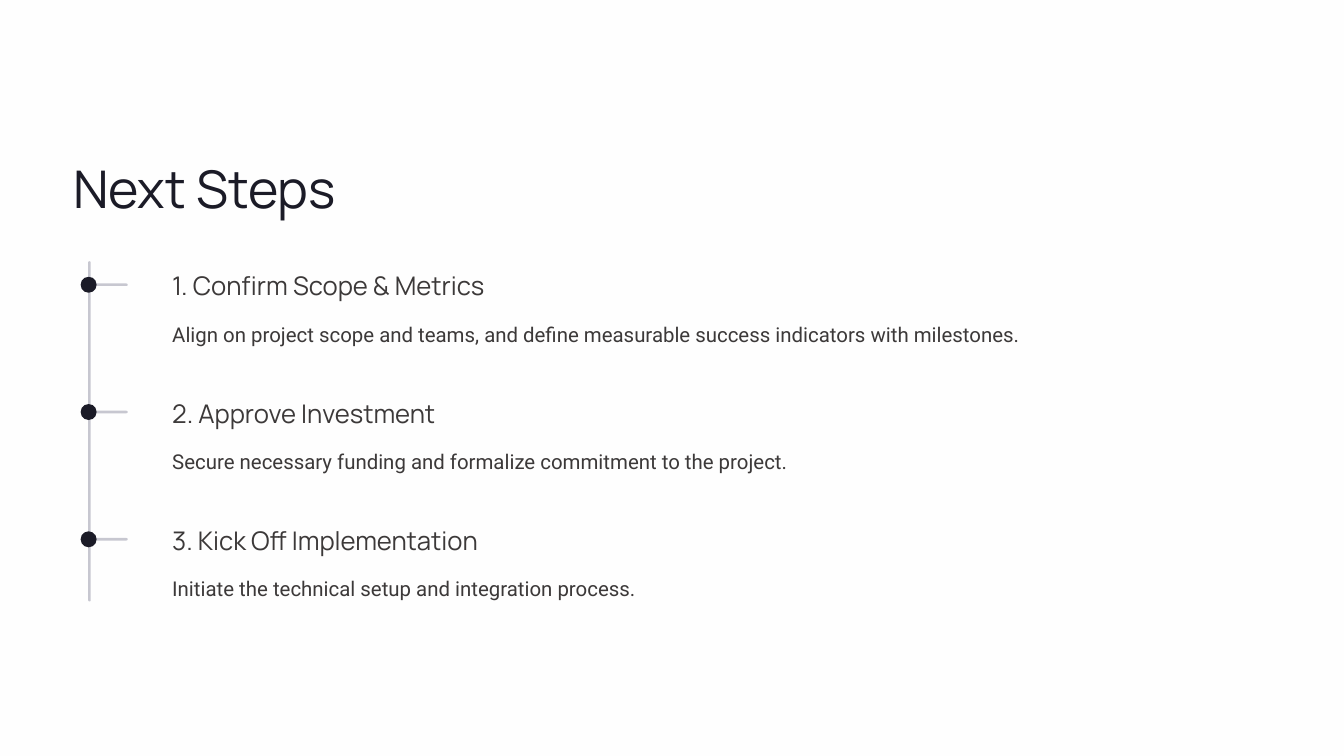
from pptx import Presentation
from pptx.dml.color import RGBColor
from pptx.enum.shapes import MSO_SHAPE as Kind
from pptx.enum.text import MSO_ANCHOR as Anchor, PP_ALIGN as Align
from pptx.util import Inches, Pt

TITLE = "Next Steps"
STEPS = [
    ("1. Confirm Scope & Metrics",
     "Align on project scope and teams, and define measurable success "
     "indicators with milestones."),
    ("2. Approve Investment",
     "Secure necessary funding and formalize commitment to the project."),
    ("3. Kick Off Implementation",
     "Initiate the technical setup and integration process."),
]
COLORS = {"back": "FEFEFE", "dark": "1B1B27", "text": "3C3939", "line": "C7C7D0"}
HEAD, BODY = "Manrope", "Roboto"

TOP, PITCH = 3.2, 1.515
TEXT_X, TEXT_W = 2.05, 13.09
THICK, DOT = 0.03, 0.19


def color(name):
    return RGBColor.from_string(COLORS[name])


def write(box, text, font, size, lead, tint):
    frame = box.text_frame
    frame.margin_left = frame.margin_right = 0
    frame.margin_top = frame.margin_bottom = 0
    frame.word_wrap = True
    frame.vertical_anchor = Anchor.TOP
    frame.text = text
    para = frame.paragraphs[0]
    para.alignment = Align.LEFT
    para.line_spacing = Pt(lead)
    para.font.name = font
    para.font.size = Pt(size)
    para.font.color.rgb = color(tint)


def label(slide, y, height, *style):
    box = slide.shapes.add_textbox(
        Inches(TEXT_X), Inches(y), Inches(TEXT_W), Inches(height))
    write(box, *style)


def draw(slide, kind, x, y, width, height, tint):
    shape = slide.shapes.add_shape(
        kind, Inches(x), Inches(y), Inches(width), Inches(height))
    shape.shadow.inherit = False
    shape.fill.solid()
    shape.fill.fore_color.rgb = color(tint)
    shape.line.fill.background()
    return shape


def bar(slide, x, y, width, height):
    shape = draw(slide, Kind.ROUNDED_RECTANGLE, x, y, width, height, "line")
    shape.adjustments[0] = 0.5


def main():
    deck = Presentation()
    deck.slide_width, deck.slide_height = Inches(16), Inches(9)
    slide = deck.slides.add_slide(deck.slide_layouts[5])
    slide.background.fill.solid()
    slide.background.fill.fore_color.rgb = color("back")

    title = slide.shapes.title
    title.left, title.top = Inches(0.87), Inches(1.84)
    title.width, title.height = Inches(6.2), Inches(0.78)
    write(title, TITLE, HEAD, 44.5, 55.5, "dark")

    bar(slide, 1.05, 3.11, THICK, 4.05)
    for i, (head, body) in enumerate(STEPS):
        y = TOP + i * PITCH
        mid = y + 0.19
        bar(slide, 1.02, mid - THICK / 2, 0.5, THICK)
        draw(slide, Kind.OVAL, 0.96, mid - DOT / 2, DOT, DOT, "dark")
        label(slide, y, 0.39, head, HEAD, 22, 27.5, "text")
        label(slide, y + 0.53, 0.4, body, BODY, 17.5, 28.5, "text")

    deck.save("out.pptx")


if __name__ == "__main__":
    main()
